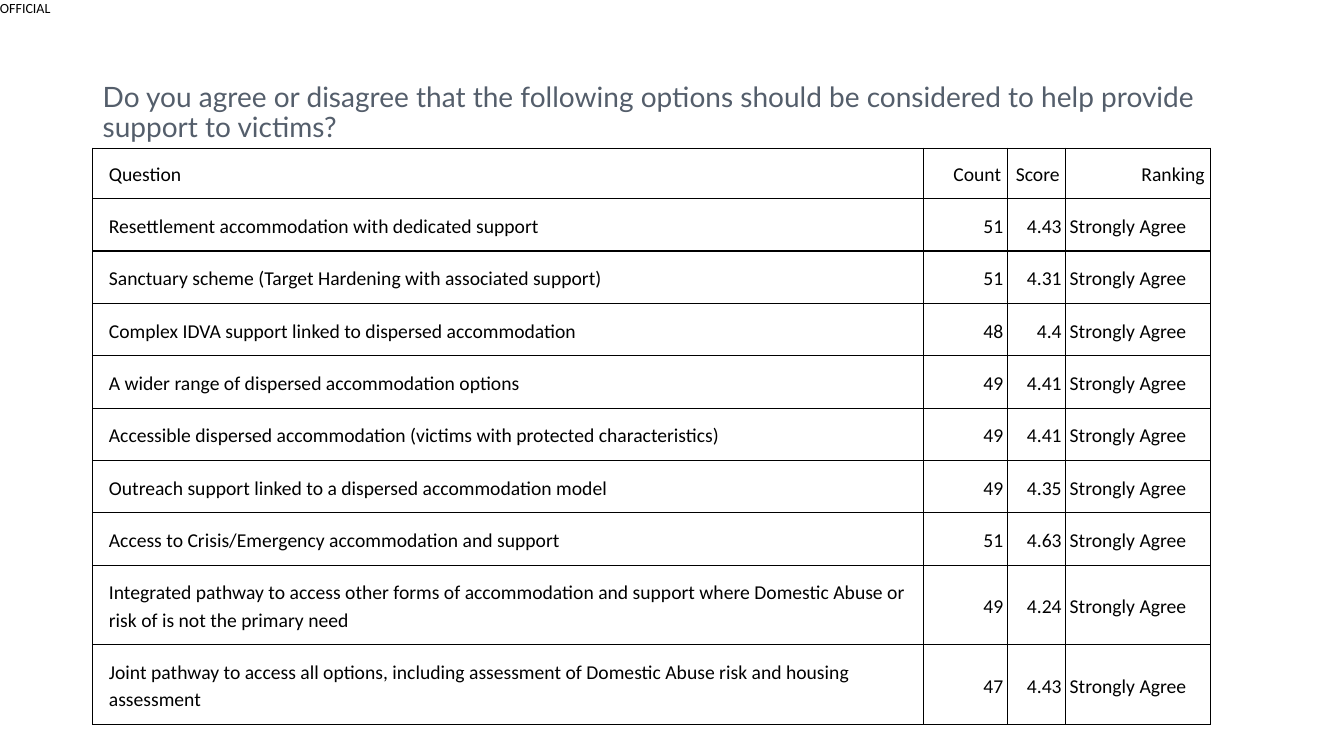
from lxml import etree
from pptx import Presentation
from pptx.dml.color import RGBColor
from pptx.enum.text import MSO_ANCHOR, PP_ALIGN
from pptx.oxml.ns import qn
from pptx.util import Inches, Pt

MIDDLE, TOP = MSO_ANCHOR.MIDDLE, MSO_ANCHOR.TOP
LEFT, RIGHT = PP_ALIGN.LEFT, PP_ALIGN.RIGHT

BLACK, SLATE = "000000", "545E6B"
MARGIN = 0.92
COLUMN_WIDTHS = (8.24, 0.83, 0.58, 1.44)
HEADER_HEIGHT, LINE_ROW, WRAPPED_ROW = 0.5, 0.52, 0.79
WRAP_LENGTH = 100  # questions longer than this take two lines

TITLE = ("Do you agree or disagree that the following options should be "
         "considered to help provide support to victims?")
HEADER = ("Question", "Count", "Score", "Ranking")
RANKING = "Strongly Agree"
RESULTS = (
    ("Resettlement accommodation with dedicated support", "51", "4.43"),
    ("Sanctuary scheme (Target Hardening with associated support)", "51", "4.31"),
    ("Complex IDVA support linked to dispersed accommodation", "48", "4.4"),
    ("A wider range of dispersed accommodation options", "49", "4.41"),
    ("Accessible dispersed accommodation (victims with protected characteristics)",
     "49", "4.41"),
    ("Outreach support linked to a dispersed accommodation model", "49", "4.35"),
    ("Access to Crisis/Emergency accommodation and support", "51", "4.63"),
    ("Integrated pathway to access other forms of accommodation and support where "
     "Domestic Abuse or risk of is not the primary need", "49", "4.24"),
    ("Joint pathway to access all options, including assessment of Domestic Abuse "
     "risk and housing assessment", "47", "4.43"),
)


def rgb(color):
    return RGBColor.from_string(color)


def format_text(tf, text, font, size, color, align=LEFT, spacing=1.0, after=0):
    tf.text = text
    p = tf.paragraphs[0]
    p.alignment, p.line_spacing, p.space_after = align, spacing, Pt(after)
    f = p.runs[0].font
    f.name, f.size, f.color.rgb = font, Pt(size), rgb(color)


def add_text(s, box, text, font, size, color, anchor=TOP, inset=(0, 0),
             wrap=True, spacing=1.0):
    tf = s.shapes.add_textbox(*map(Inches, box)).text_frame
    tf.word_wrap, tf.vertical_anchor = wrap, anchor
    tf.margin_left = tf.margin_right = Inches(inset[0])
    tf.margin_top = tf.margin_bottom = Inches(inset[1])
    format_text(tf, text, font, size, color, spacing=spacing)


def add_borders(cell, color, width):
    tc_pr = cell._tc.get_or_add_tcPr()
    for i, side in enumerate(("a:lnL", "a:lnR", "a:lnT", "a:lnB")):
        ln = etree.Element(qn(side), w=str(Pt(width)))
        fill = etree.SubElement(ln, qn("a:solidFill"))
        etree.SubElement(fill, qn("a:srgbClr"), val=color)
        tc_pr.insert(i, ln)  # borders come before the fill


def format_cell(cell, text, align, left, side, vertical):
    cell.fill.background()
    cell.vertical_anchor = MIDDLE
    cell.margin_left, cell.margin_right = Inches(left), Inches(side)
    cell.margin_top = cell.margin_bottom = Inches(vertical)
    format_text(cell.text_frame, text, "Calibri", 14, BLACK, align, 1.15, 10)
    add_borders(cell, BLACK, 1)


def add_results_table(s, left, top):
    rows = [HEADER] + [result + (RANKING,) for result in RESULTS]
    heights = [HEADER_HEIGHT] + [
        WRAPPED_ROW if len(result[0]) > WRAP_LENGTH else LINE_ROW
        for result in RESULTS]
    box = (left, top, sum(COLUMN_WIDTHS), sum(heights))
    table = s.shapes.add_table(
        len(rows), len(HEADER), *map(Inches, box)).table
    table.horz_banding = False
    for column, width in zip(table.columns, COLUMN_WIDTHS):
        column.width = Inches(width)
    for i, (values, height) in enumerate(zip(rows, heights)):
        table.rows[i].height = Inches(height)
        side, vertical = (0.06, 0.11) if i == 0 else (0.04, 0.12)
        # Numbers and every header but the first sit on the right
        aligns = (LEFT, RIGHT, RIGHT, RIGHT if i == 0 else LEFT)
        for j, (value, align) in enumerate(zip(values, aligns)):
            format_cell(table.cell(i, j), value, align,
                        0.16 if j == 0 else side, side, vertical)


def main():
    prs = Presentation()
    prs.slide_width, prs.slide_height = Inches(13.33), Inches(7.5)
    s = prs.slides.add_slide(prs.slide_layouts[6])

    # Classification marking
    add_text(s, (0, 0, 0.53, 0.17), "OFFICIAL", "Calibri", 10, BLACK, wrap=False)

    # Title
    add_text(s, (MARGIN, 0.4, 11.5, 1.45), TITLE, "Lato", 20, SLATE,
             anchor=MIDDLE, inset=(0.1, 0.05), spacing=0.9)

    # Survey results
    add_results_table(s, MARGIN, 1.47)
    prs.save("out.pptx")


if __name__ == "__main__":
    main()
